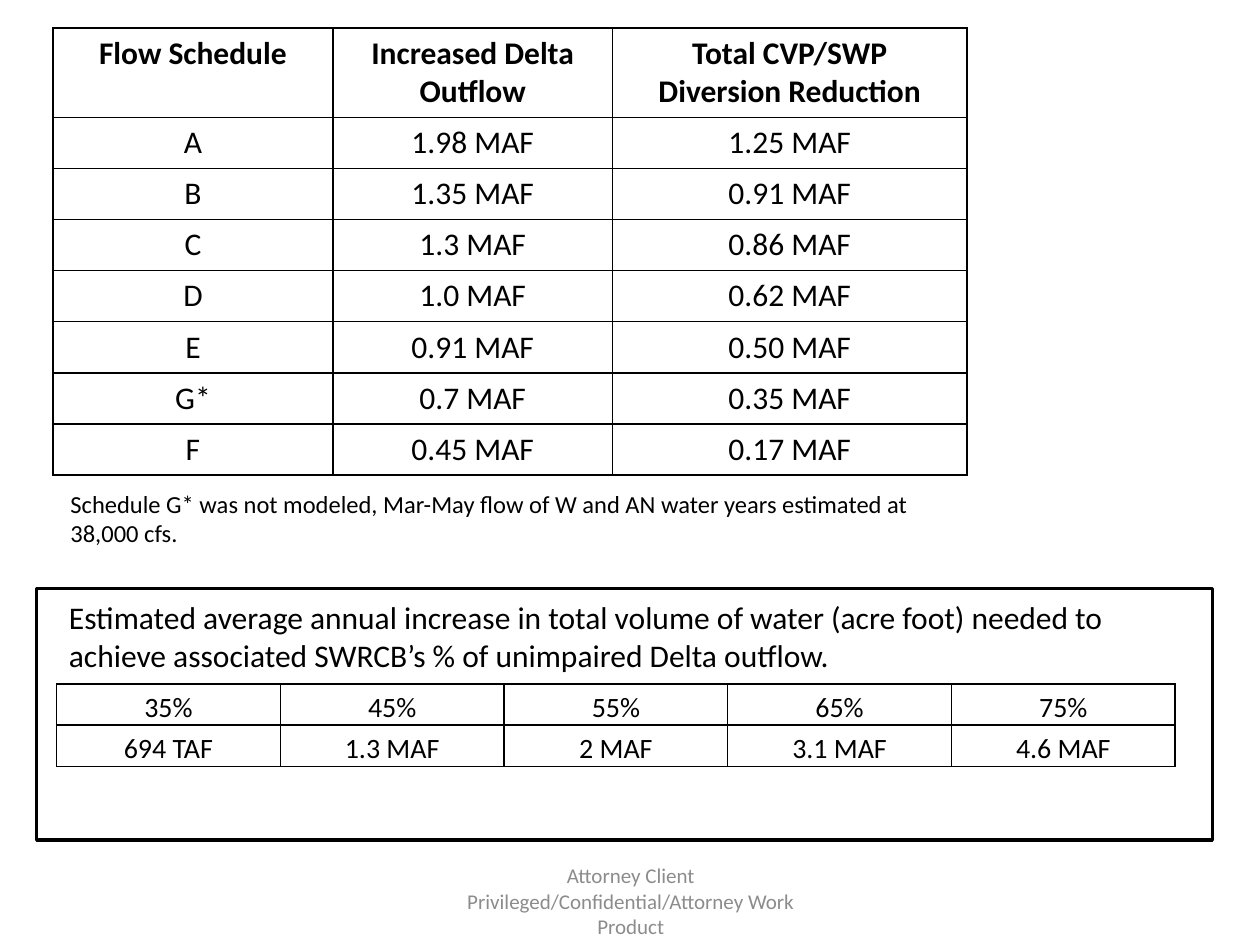
"""Build the slide of flow schedules and Delta outflow volumes."""
from lxml.etree import SubElement
from pptx import Presentation
from pptx.dml.color import RGBColor
from pptx.enum.shapes import MSO_SHAPE
from pptx.enum.text import MSO_ANCHOR, PP_ALIGN
from pptx.oxml.ns import qn
from pptx.util import Cm, Pt

BLACK = RGBColor(0, 0, 0)
GREY = RGBColor(0x8C, 0x8C, 0x8C)
WHITE = RGBColor(255, 255, 255)
FONT = "Calibri"

FLOWS = [
    ("Flow Schedule", "Increased Delta Outflow", "Total CVP/SWP\nDiversion Reduction"),
    ("A", "1.98 MAF", "1.25 MAF"),
    ("B", "1.35 MAF", "0.91 MAF"),
    ("C", "1.3 MAF", "0.86 MAF"),
    ("D", "1.0 MAF", "0.62 MAF"),
    ("E", "0.91 MAF", "0.50 MAF"),
    ("G*", "0.7 MAF", "0.35 MAF"),
    ("F", "0.45 MAF", "0.17 MAF"),
]
SHARES = [
    ("35%", "45%", "55%", "65%", "75%"),
    ("694 TAF", "1.3 MAF", "2 MAF", "3.1 MAF", "4.6 MAF"),
]
NOTE = ("Schedule G* was not modeled, Mar-May flow of W and AN water years "
        "estimated at 38,000 cfs.")
INTRO = ("Estimated average annual increase in total volume of water (acre foot) "
         "needed to achieve associated SWRCB’s % of unimpaired Delta outflow.")
FOOTER = "Attorney Client Privileged/Confidential/Attorney Work Product"


def write(frame, text, size, color=BLACK, align=PP_ALIGN.LEFT, bold=False):
    frame.text = text
    frame.word_wrap = True
    for para in frame.paragraphs:
        para.alignment = align
        font = para.font
        font.name, font.size, font.bold = FONT, Pt(size), bold
        font.color.rgb = color


def add_text(slide, box, text, size, **style):
    frame = slide.shapes.add_textbox(*map(Cm, box)).text_frame
    write(frame, text, size, **style)
    return frame


def add_border(cell):
    props = cell._tc.get_or_add_tcPr()
    for side in ("a:lnL", "a:lnR", "a:lnT", "a:lnB"):
        line = SubElement(props, qn(side), w=str(Pt(1)))
        fill = SubElement(line, qn("a:solidFill"))
        SubElement(fill, qn("a:srgbClr"), val=str(BLACK))


def add_grid(slide, left, top, widths, heights, rows, size, head=False):
    table = slide.shapes.add_table(
        len(rows), len(widths), Cm(left), Cm(top),
        Cm(sum(widths)), Cm(sum(heights))).table
    table.first_row = head
    table.horz_banding = False
    for col, width in zip(table.columns, widths):
        col.width = Cm(width)
    for r, (row, height) in enumerate(zip(rows, heights)):
        table.rows[r].height = Cm(height)
        for c, text in enumerate(row):
            cell = table.cell(r, c)
            write(cell.text_frame, text, size, align=PP_ALIGN.CENTER,
                  bold=head and r == 0)
            add_border(cell)
            cell.fill.solid()
            cell.fill.fore_color.rgb = WHITE
    return table


def main():
    deck = Presentation()
    deck.slide_width, deck.slide_height = Cm(25.4), Cm(19.05)
    slide = deck.slides.add_slide(deck.slide_layouts[6])

    add_grid(slide, 1.07, 0.56, [5.64, 5.64, 7.14], [1.8] + [1.03] * 7,
             FLOWS, 18, head=True)
    footer = add_text(slide, (8.69, 17.65, 8.05, 1.02), FOOTER, 12,
                      color=GREY, align=PP_ALIGN.CENTER)
    footer.vertical_anchor = MSO_ANCHOR.MIDDLE

    frame = slide.shapes.add_shape(
        MSO_SHAPE.RECTANGLE, *map(Cm, (0.74, 11.86, 23.7, 5.08)))
    frame.shadow.inherit = False
    frame.fill.background()
    frame.line.color.rgb = BLACK
    frame.line.width = Pt(2)

    add_text(slide, (1.14, 11.94, 22.86, 1.8), INTRO, 18)
    add_text(slide, (1.17, 9.73, 18.42, 1.45), NOTE, 14)

    shares = add_grid(slide, 1.14, 13.79, [4.51] * 5, [0.83] * 2, SHARES, 16)
    for cell in shares.iter_cells():
        cell.vertical_anchor = MSO_ANCHOR.BOTTOM
        cell.margin_left = cell.margin_right = cell.margin_top = Cm(0.03)
        cell.margin_bottom = 0

    deck.save("out.pptx")


if __name__ == "__main__":
    main()
